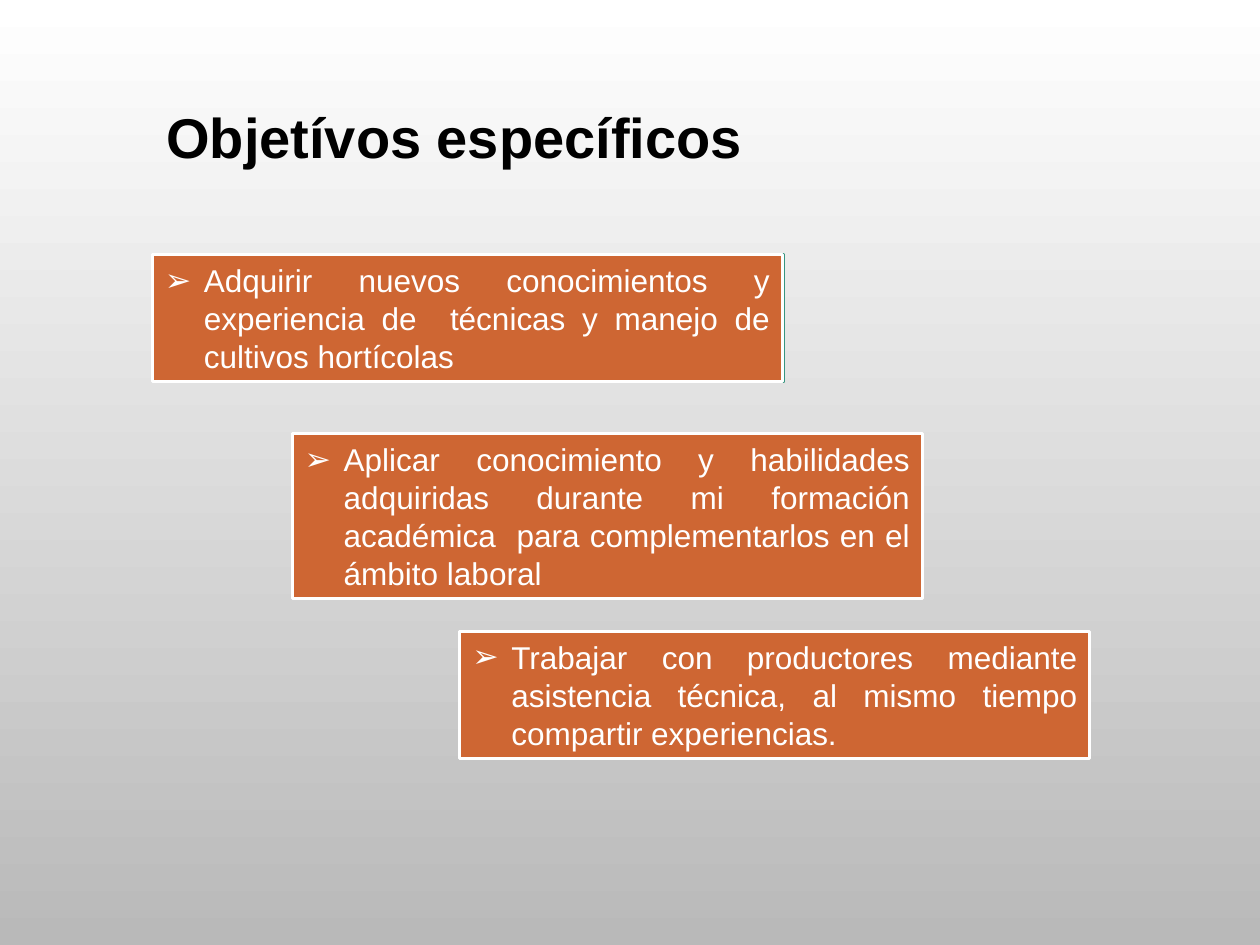
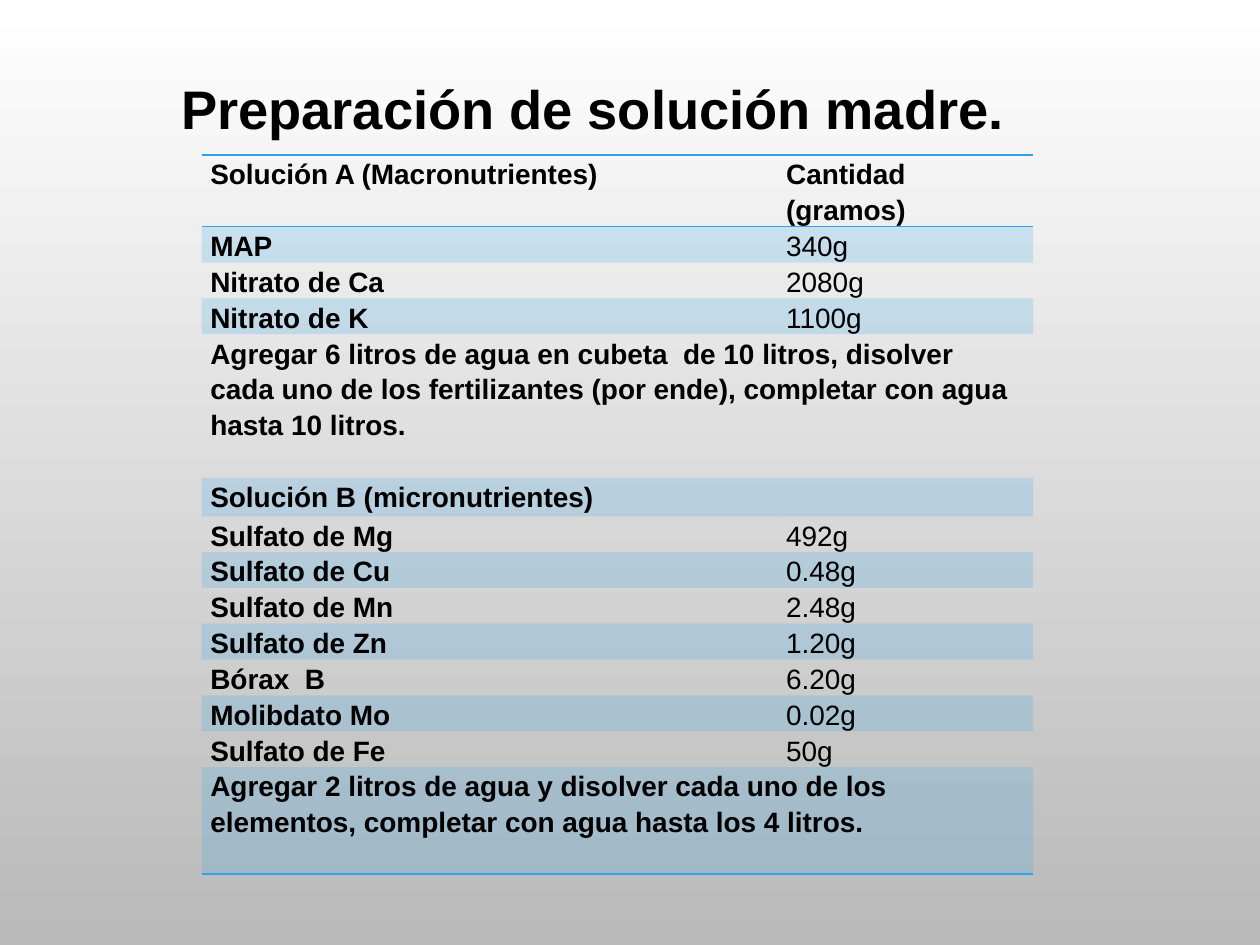
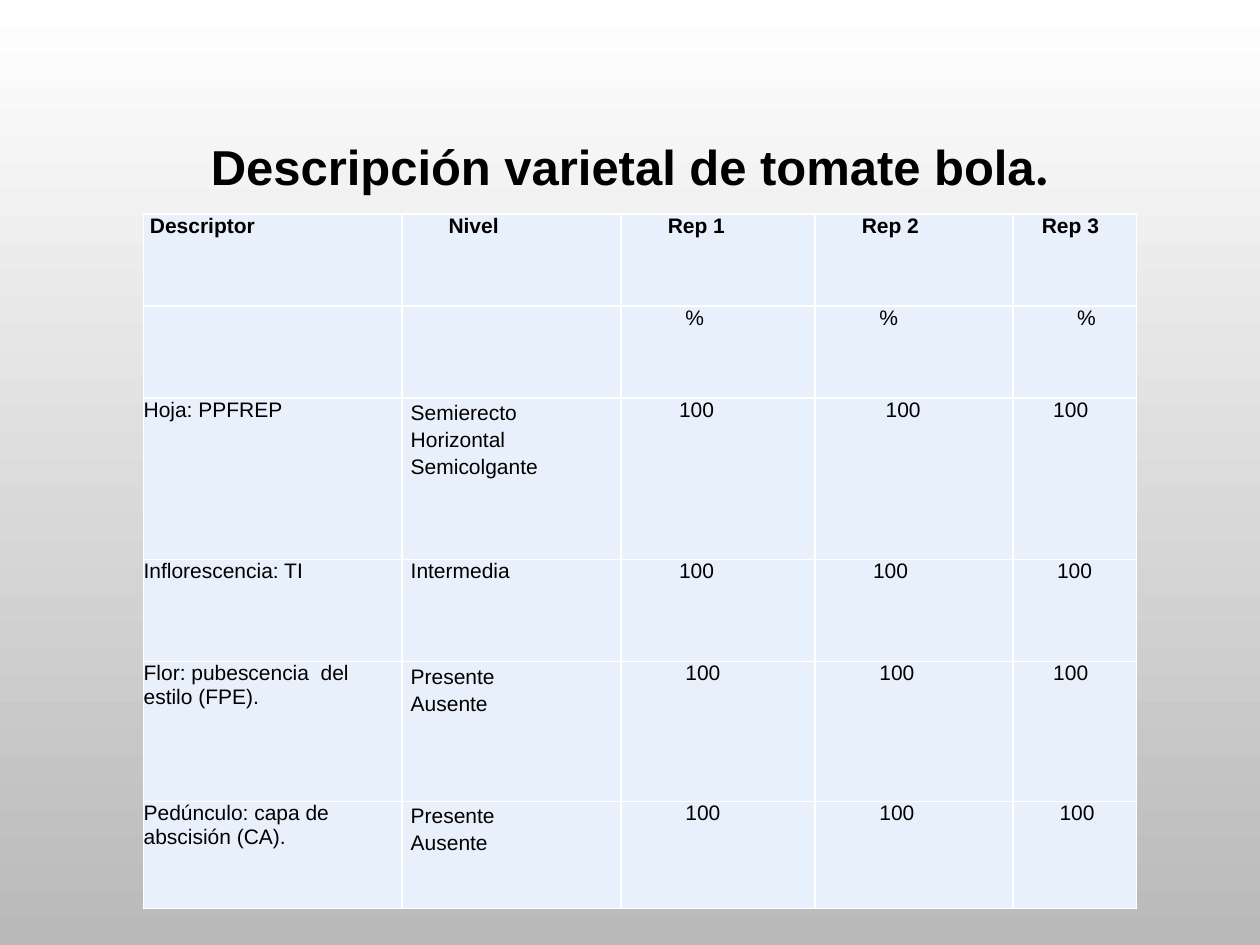
"""Build three slides on horticultural objectives, nutrient solutions and tomato traits."""
from lxml import etree
from pptx import Presentation
from pptx import util as u
from pptx.dml.color import RGBColor
from pptx.enum import shapes, text
from pptx.oxml.ns import qn

FONT = "Arial"
BLACK, WHITE, ORANGE = "000000", "FFFFFF", "CE6633"
TEAL, TEAL_EDGE, GRAY = "4BCAAD", "379580", "B9B9B9"
BLUE, PALE = "2FA3EE", "E8F0FC"
LEFT, CENTER, JUSTIFY = text.PP_ALIGN.LEFT, text.PP_ALIGN.CENTER, text.PP_ALIGN.JUSTIFY

OBJECTIVES = [
    (1.21, 2.02, 1.01, "Adquirir nuevos conocimientos y experiencia de  técnicas y manejo de cultivos hortícolas"),
    (2.32, 3.44, 1.31, "Aplicar conocimiento y habilidades adquiridas durante mi formación académica  "
                       "para complementarlos en el ámbito laboral"),
    (3.65, 5.01, 1.01, "Trabajar con productores mediante asistencia técnica, al mismo tiempo compartir experiencias."),
]

SOLUTION_COLUMNS = [4.57, 2.03]
SOLUTION_ROWS = [
    (0.57, "Solución A (Macronutrientes)", "Cantidad (gramos)"),
    (0.28, "MAP", "340g"),
    (0.28, "Nitrato de Ca", "2080g"),
    (0.28, "Nitrato de K", "1100g"),
    (1.14, "Agregar 6 litros de agua en cubeta  de 10 litros, disolver cada uno de los fertilizantes "
           "(por ende), completar con agua hasta 10 litros.", None),
    (0.28, "Solución B (micronutrientes)", ""),
    (0.28, "Sulfato de Mg", "492g"),
    (0.28, "Sulfato de Cu", "0.48g"),
    (0.28, "Sulfato de Mn", "2.48g"),
    (0.28, "Sulfato de Zn", "1.20g"),
    (0.28, "Bórax  B", "6.20g"),
    (0.28, "Molibdato Mo", "0.02g"),
    (0.28, "Sulfato de Fe", "50g"),
    (0.85, "Agregar 2 litros de agua y disolver cada uno de los elementos, completar con agua "
           "hasta los 4 litros.", None),
]

TRAIT_COLUMNS = [2.05, 1.74, 1.54, 1.57, 0.98]
TRAIT_ROWS = [
    (0.73, ["Descriptor", "Nivel", "Rep 1", "Rep 2", "Rep 3"], [0.05, 0.37, 0.37, 0.37, 0.23]),
    (0.73, ["", "", "%", "%", "%"], [0, 0, 0.51, 0.51, 0.51]),
    (1.28, ["Hoja: PPFREP", "Semierecto\vHorizontal\vSemicolgante", "100", "100", "100"],
     [0, 0.07, 0.46, 0.56, 0.32]),
    (0.81, ["Inflorescencia: TI", "Intermedia", "100", "100", "100"], [0, 0.07, 0.46, 0.46, 0.35]),
    (1.11, ["Flor: pubescencia  del estilo (FPE).", "Presente\vAusente", "100", "100", "100"],
     [0, 0.07, 0.51, 0.51, 0.32]),
    (0.85, ["Pedúnculo: capa de abscisión (CA).", "Presente\vAusente", "100", "100", "100"],
     [0, 0.07, 0.51, 0.51, 0.37]),
]


def color(value):
    return RGBColor.from_string(value)


def style(span, size, bold=False, ink=BLACK, font=FONT):
    span.font.name = font
    span.font.size = u.Pt(size)
    span.font.bold = bold
    span.font.color.rgb = color(ink)


def write(para, words, size, align=LEFT, spacing=1.0, indent=0, hanging=0, bullet=None, **look):
    para.text = words
    para.alignment = align
    para.line_spacing = spacing
    properties = para._p.get_or_add_pPr()
    properties.set("marL", str(u.Inches(indent)))
    properties.set("indent", str(-u.Inches(hanging)))
    if bullet:
        etree.SubElement(properties, qn("a:buFont"), typeface=FONT)
        etree.SubElement(properties, qn("a:buChar"), char=bullet)
    for span in para.runs:
        style(span, size, **look)


def add_page(deck, title, place, size, align=CENTER, spacing=0.9, bottom=0.5):
    page = deck.slides.add_slide(deck.slide_layouts[5])
    box = page.shapes.title
    box.left, box.top, box.width, box.height = map(u.Inches, place)
    frame = box.text_frame
    frame.auto_size = text.MSO_AUTO_SIZE.NONE
    frame.vertical_anchor = text.MSO_ANCHOR.MIDDLE
    frame.margin_bottom = u.Inches(bottom)
    write(frame.paragraphs[0], title, size, align, spacing, bold=True)
    return page


def add_box(page, left, top, height, fill, edge, weight):
    box = page.shapes.add_shape(shapes.MSO_SHAPE.RECTANGLE, *map(u.Inches, (left, top, 5, height)))
    box.shadow.inherit = False
    box.fill.solid()
    box.fill.fore_color.rgb = color(fill)
    box.line.color.rgb = color(edge)
    box.line.width = u.Pt(weight)
    return box


def add_table(page, left, top, widths, heights):
    size = sum(widths), sum(heights)
    table = page.shapes.add_table(len(heights), len(widths), *map(u.Inches, (left, top, *size))).table
    table.first_row = table.horz_banding = False
    for column, width in zip(table.columns, widths):
        column.width = u.Inches(width)
    for row, height in zip(table.rows, heights):
        row.height = u.Inches(height)
    return table


def format_cell(cell, inset=0, fill=None, alpha=100, **edges):
    cell.margin_left = cell.margin_right = u.Inches(inset)
    cell.margin_top = cell.margin_bottom = 0
    properties = cell._tc.get_or_add_tcPr()
    for side in "LRTB":
        line = etree.SubElement(properties, qn("a:ln" + side), w=str(u.Pt(1)))
        ink = edges.get(side)
        paint = etree.SubElement(line, qn("a:solidFill" if ink else "a:noFill"))
        if ink:
            etree.SubElement(paint, qn("a:srgbClr"), val=ink)
    if fill:
        cell.fill.solid()
        cell.fill.fore_color.rgb = color(fill)
        tint = properties.find(qn("a:solidFill")).find(qn("a:srgbClr"))
        if alpha < 100:
            etree.SubElement(tint, qn("a:alpha"), val=str(alpha * 1000))
    else:
        cell.fill.background()


def set_background(deck):
    fill = deck.slide_master.background.fill
    fill.gradient()
    fill.gradient_angle = 270
    for stop, position, ink in zip(fill.gradient_stops, (0, 1), (WHITE, GRAY)):
        stop.position = position
        stop.color.rgb = color(ink)


def add_objectives(deck):
    page = add_page(deck, "Objetívos específicos", (1.22, 0.76, 4.93, 0.64), 32, LEFT, 1.0, 0.05)
    add_box(page, 1.22, 2.02, 1.01, TEAL, TEAL_EDGE, 1.25)
    for left, top, height, words in OBJECTIVES:
        box = add_box(page, left, top, height, ORANGE, WHITE, 1.75)
        box.text_frame.word_wrap = True
        write(box.text_frame.paragraphs[0], words, 18, JUSTIFY, indent=0.31, hanging=0.31,
              bullet="➢", ink=WHITE)


def add_solutions(deck):
    page = add_page(deck, "Preparación de solución madre.", (0.45, 0.24, 8.5, 1.75), 31)
    table = add_table(page, 1.6, 1.23, SOLUTION_COLUMNS, [row[0] for row in SOLUTION_ROWS])
    last = len(SOLUTION_ROWS) - 1
    for index, (_, *words) in enumerate(SOLUTION_ROWS):
        edges = {"T": BLUE if index in (0, 1) else None, "B": BLUE if index in (0, last) else None}
        for column, value in enumerate(words):
            cell = table.cell(index, column)
            format_cell(cell, 0.07, BLUE if index % 2 else None, 20, **edges)
            if value:
                write(cell.text_frame.paragraphs[0], value, 16, spacing=1.15,
                      bold=column == 0 or index == 0)
        if words[1] is None:
            table.cell(index, 0).merge(table.cell(index, 1))


def add_traits(deck):
    page = add_page(deck, "Descripción varietal de tomate bola", (0.75, 0.68, 8.5, 1.75), 28)
    period = page.shapes.title.text_frame.paragraphs[0].add_run()
    period.text = "."
    style(period, 31, bold=True, font="Calibri")
    table = add_table(page, 1.14, 1.7, TRAIT_COLUMNS, [row[0] for row in TRAIT_ROWS])
    for index, (_, words, indents) in enumerate(TRAIT_ROWS):
        for column, (value, indent) in enumerate(zip(words, indents)):
            cell = table.cell(index, column)
            format_cell(cell, fill=PALE, **dict.fromkeys("LRTB", WHITE))
            if value:
                write(cell.text_frame.paragraphs[0], value, 12, indent=indent, bold=index == 0,
                      spacing=1.15 if "\v" in value else u.Pt(13.7))


def main():
    deck = Presentation()
    deck.slide_width, deck.slide_height = u.Inches(10), u.Inches(7.5)
    set_background(deck)
    add_objectives(deck)
    add_solutions(deck)
    add_traits(deck)
    deck.save("out.pptx")


if __name__ == "__main__":
    main()
